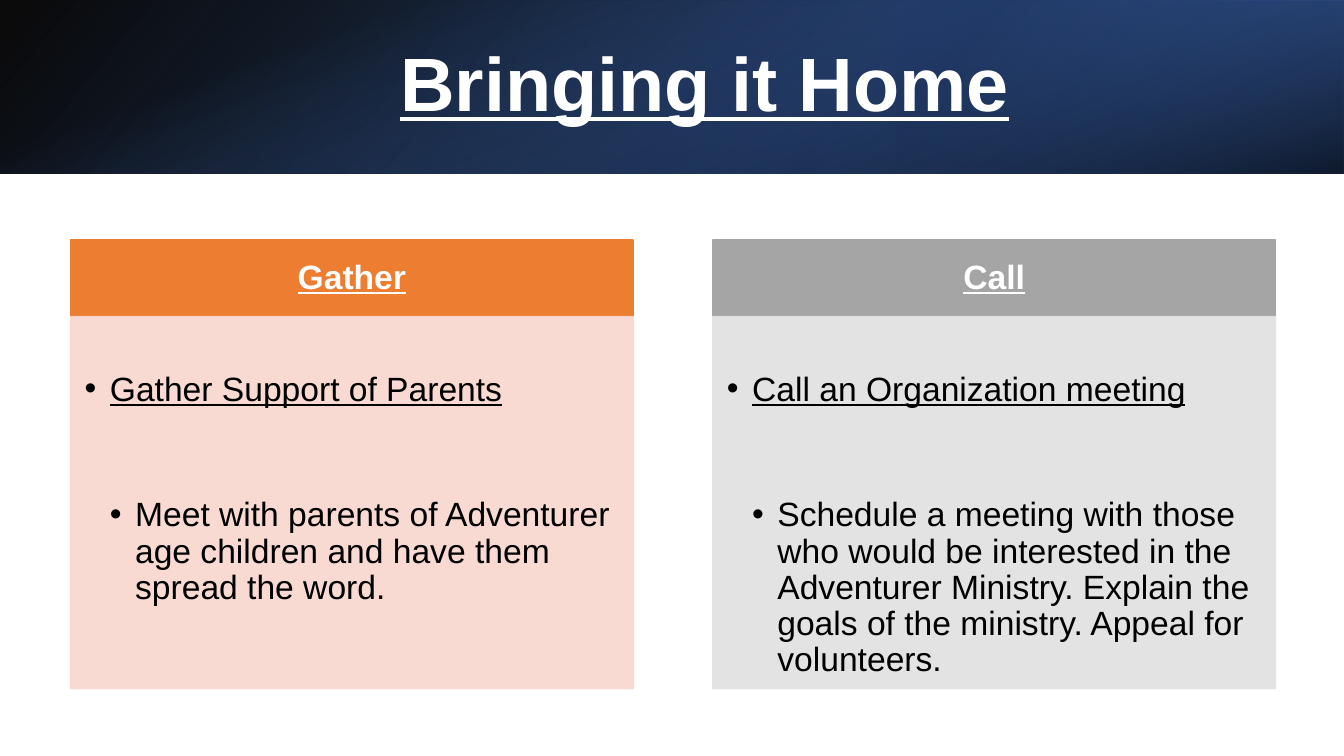
from dataclasses import dataclass

from lxml import etree
from pptx import Presentation
from pptx.dml.color import RGBColor
from pptx.enum.shapes import MSO_SHAPE
from pptx.enum.text import MSO_ANCHOR, PP_ALIGN
from pptx.oxml.ns import qn
from pptx.util import Inches, Pt

RECTANGLE = MSO_SHAPE.RECTANGLE
TOP, MIDDLE = MSO_ANCHOR.TOP, MSO_ANCHOR.MIDDLE
LEFT, CENTER = PP_ALIGN.LEFT, PP_ALIGN.CENTER


@dataclass(frozen=True)
class Theme:
    font: str = "Arial"
    title_size: int = 54
    text_size: int = 24
    white: str = "FFFFFF"
    black: str = "000000"
    blue: str = "4472C4"
    mid_blue: str = "2F5597"
    dark_blue: str = "203864"
    orange: str = "ED7D31"
    pale_orange: str = "F8D7CE"
    gray: str = "A5A5A5"
    pale_gray: str = "E1E1E1"


class SlideBuilder:
    def __init__(self, page, theme):
        self.page = page
        self.theme = theme

    def rectangle(self, left, top, width, height):
        box = self.page.shapes.add_shape(
            RECTANGLE, Inches(left), Inches(top), Inches(width), Inches(height))
        box.shadow.inherit = False
        return box

    def gradient_band(self, place, stops, angle, rotation=0, flip=False):
        """Each stop is position, colour and opacity, in percent."""
        box = self.rectangle(*place)
        box.line.fill.background()
        box.rotation = rotation
        properties = box._element.spPr
        frame = properties.find(qn("a:xfrm"))
        if flip:
            frame.set("flipH", "1")
        gradient = etree.Element(qn("a:gradFill"), rotWithShape="1")
        stop_list = etree.SubElement(gradient, qn("a:gsLst"))
        for position, color, opacity in stops:
            stop = etree.SubElement(stop_list, qn("a:gs"), pos=str(position * 1000))
            tint = etree.SubElement(stop, qn("a:srgbClr"), val=color)
            etree.SubElement(tint, qn("a:alpha"), val=str(opacity * 1000))
        etree.SubElement(gradient, qn("a:lin"), ang=str(angle * 60000), scaled="0")
        properties.find(qn("a:prstGeom")).addnext(gradient)

    def panel(self, place, color, opacity=100):
        box = self.rectangle(*place)
        box.line.width = Pt(1)
        for fill in (box.fill, box.line.fill):
            fill.solid()
            fill.fore_color.rgb = RGBColor.from_string(color)
        if opacity < 100:
            for tint in box._element.spPr.iter(qn("a:srgbClr")):
                etree.SubElement(tint, qn("a:alpha"), val=str(opacity * 1000))
        return box

    def frame(self, box, anchor, insets):
        frame = box.text_frame
        frame.word_wrap = True
        frame.vertical_anchor = anchor
        (frame.margin_left, frame.margin_top,
         frame.margin_right, frame.margin_bottom) = map(Inches, insets)
        return frame

    def set_text(self, para, text, size, color, align=LEFT, bold=False, underline=False):
        para.text = text
        para.alignment = align
        para.line_spacing = 0.9
        font = para.runs[0].font
        font.name, font.size = self.theme.font, Pt(size)
        font.color.rgb = RGBColor.from_string(color)
        font.bold, font.underline = bold, underline

    def heading(self, box, text, size, insets):
        para = self.frame(box, MIDDLE, insets).paragraphs[0]
        self.set_text(para, text, size, self.theme.white, CENTER, bold=True, underline=True)

    def title(self, place, text):
        box = self.page.shapes.add_textbox(*map(Inches, place))
        self.heading(box, text, self.theme.title_size, (0.1, 0.05, 0.1, 0.05))

    def bullet(self, para, text, level, underline):
        properties = para._p.get_or_add_pPr()
        properties.set("marL", str(Inches(0.25 * level)))
        properties.set("indent", str(Inches(-0.25)))
        etree.SubElement(properties, qn("a:buFont"), typeface=self.theme.font)
        etree.SubElement(properties, qn("a:buChar"), char="•")
        self.set_text(para, text, self.theme.text_size, self.theme.black, underline=underline)

    def card(self, left, colors, heading, topic, detail):
        width, top, header_height, body_height = 5.58, 2.38, 0.76, 3.69
        header_color, body_color = colors
        header = self.panel((left, top, width, header_height), header_color)
        self.heading(header, heading, self.theme.text_size, (0.19, 0.11, 0.19, 0.11))
        body = self.panel((left, top + header_height, width, body_height), body_color, 90)
        frame = self.frame(body, TOP, (0.14, 0.55, 0.19, 0))
        self.bullet(frame.paragraphs[0], topic, level=1, underline=True)
        detail_para = frame.add_paragraph()
        self.bullet(detail_para, detail, level=2, underline=False)
        detail_para.space_before = Pt(64)


def main():
    theme = Theme()
    deck = Presentation()
    deck.slide_width, deck.slide_height = Inches(13.33), Inches(7.5)
    page = deck.slides.add_slide(deck.slide_layouts[6])
    builder = SlideBuilder(page, theme)

    # Layered gradient banner
    builder.gradient_band((0, 0, 13.33, 1.72),
                          [(0, theme.black, 96), (100, theme.mid_blue, 100)],
                          140, flip=True)
    builder.gradient_band((8.89, 0, 4.44, 1.72),
                          [(19, theme.dark_blue, 68), (100, theme.blue, 79)],
                          320, rotation=180, flip=True)
    builder.gradient_band((5.8, -5.8, 1.72, 13.33),
                          [(23, theme.blue, 0), (99, theme.black, 74)],
                          340, rotation=90)
    builder.title((1.5, 0.38, 10.98, 0.96), "Bringing it Home")

    # Two cards
    cards = [
        ((theme.orange, theme.pale_orange), "Gather", "Gather Support of Parents",
         "Meet with parents of Adventurer age children and have them spread the word."),
        ((theme.gray, theme.pale_gray), "Call", "Call an Organization meeting",
         "Schedule a meeting with those who would be interested in the Adventurer "
         "Ministry. Explain the goals of the ministry. Appeal for volunteers."),
    ]
    for index, card in enumerate(cards):
        builder.card(0.7 + 6.37 * index, *card)

    deck.save("out.pptx")


if __name__ == "__main__":
    main()
